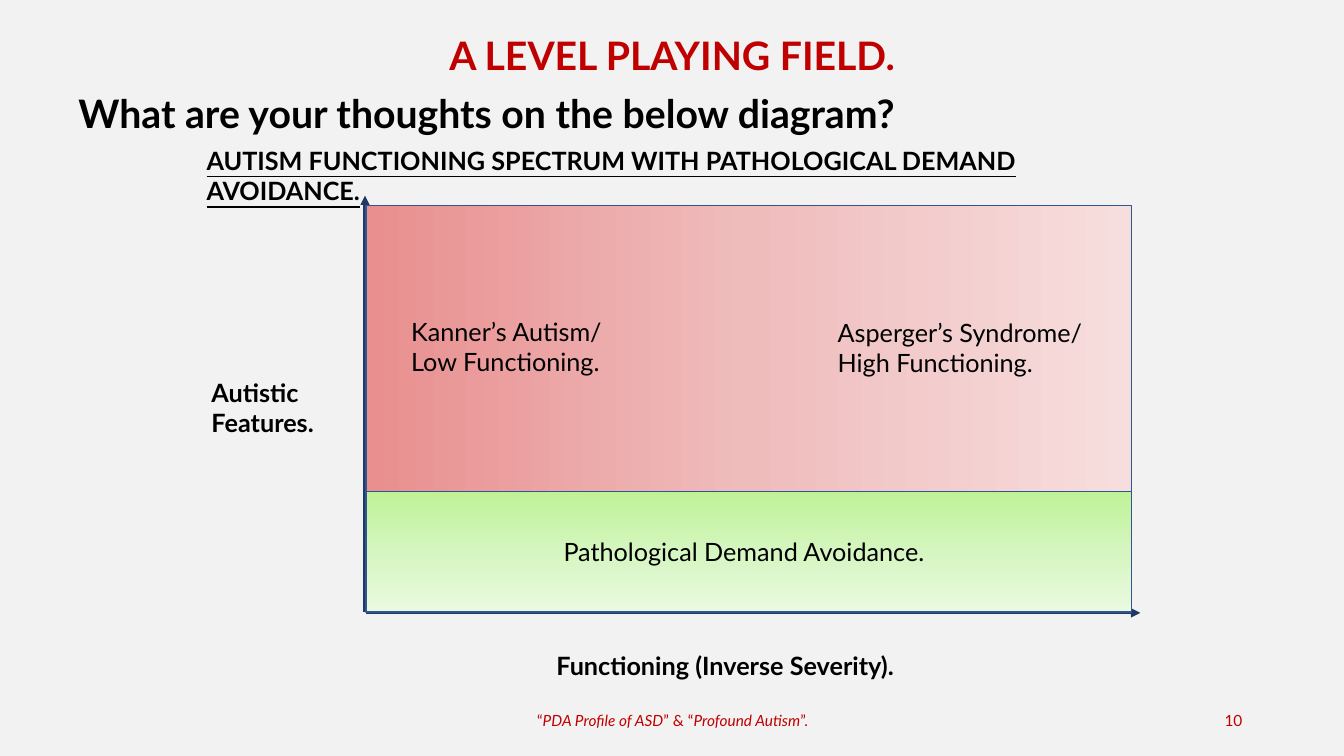
from copy import deepcopy

from pptx import Presentation
from pptx.dml.color import RGBColor
from pptx.enum.shapes import MSO_CONNECTOR, MSO_SHAPE
from pptx.enum.text import MSO_ANCHOR, PP_ALIGN
from pptx.oxml.ns import qn
from pptx.util import Inches, Pt

LINE, RECT = MSO_CONNECTOR.STRAIGHT, MSO_SHAPE.RECTANGLE
TOP, MIDDLE = MSO_ANCHOR.TOP, MSO_ANCHOR.MIDDLE
LEFT, CENTER, RIGHT = PP_ALIGN.LEFT, PP_ALIGN.CENTER, PP_ALIGN.RIGHT

WIDE, HIGH = Inches(13.33), Inches(7.5)
FONT = "Lato"
COLORS = {
    "paper": "F2F2F2", "red": "C00000", "ink": "000000",
    "axis": "203864", "edge": "325491",
}
PINKS = ("E98F8F", "EFBCBC", "F7DEDE")
GREENS = ("BEF297", "D5F6C0", "EAFAE0")

FIELD_X, FIELD_W = 27.23, 56.94
FIELD_TOP, SPLIT, BASE = 27.2, 65, 80.93


def rgb(name):
    return RGBColor.from_string(COLORS[name])


def across(share):
    return round(WIDE * share / 100)


def down(share):
    return round(HIGH * share / 100)


def area(x, y, w, h):
    return across(x), down(y), across(w), down(h)


def add_text(slide, box, text, size=18, color="ink", bold=False,
             align=LEFT, anchor=TOP):
    frame = slide.shapes.add_textbox(*area(*box)).text_frame
    frame.word_wrap = True
    frame.vertical_anchor = anchor
    frame.text = text
    for para in frame.paragraphs:
        para.alignment = align
        for run in para.runs:
            style(run, size, color, bold)
    return frame


def style(run, size, color, bold=False):
    font = run.font
    font.name, font.size, font.bold = FONT, Pt(size), bold
    font.color.rgb = rgb(color)


def add_band(slide, box, shades, angle):
    band = slide.shapes.add_shape(RECT, *area(*box))
    band.shadow.inherit = False
    band.line.color.rgb = rgb("edge")
    band.line.width = Pt(1)
    fill = band.fill
    fill.gradient()
    fill.gradient_angle = angle
    stops = next(band._element.spPr.iter(qn("a:gsLst")))
    stops.append(deepcopy(stops[-1]))
    for i, (stop, shade) in enumerate(zip(fill.gradient_stops, shades)):
        stop.position = i / (len(shades) - 1)
        stop.color.rgb = RGBColor.from_string(shade)


def add_axis(slide, x1, y1, x2, y2):
    axis = slide.shapes.add_connector(
        LINE, across(x1), down(y1), across(x2), down(y2))
    axis.line.color.rgb = rgb("axis")
    axis.line.width = Pt(2.25)
    props = axis._element.spPr
    tip = props.find(qn("a:ln")).makeelement(
        qn("a:tailEnd"), {"type": "triangle"})
    props.find(qn("a:ln")).append(tip)
    props.append(props.makeelement(qn("a:effectLst"), {}))


def add_footer(slide):
    frame = add_text(slide, (33.16, 92.67, 33.76, 5.33), "“", 11, "red",
                     align=CENTER, anchor=MIDDLE)
    parts = (("PDA Profile of ASD", True), ("” & “", False),
             ("Profound Autism", True), ("”.", False))
    for text, slant in parts:
        run = frame.paragraphs[0].add_run()
        run.text = text
        style(run, 11, "red")
        run.font.italic = slant
    add_text(slide, (70.67, 92.67, 22.51, 5.33), "10", 11, "red",
             align=RIGHT, anchor=MIDDLE)


def add_field(slide):
    add_axis(slide, 27.16, BASE, 27.16, 25.87)
    add_axis(slide, FIELD_X, 81.07, 84.85, 81.07)
    add_band(slide, (FIELD_X, FIELD_TOP, FIELD_W, SPLIT - FIELD_TOP),
             PINKS, 0)
    add_band(slide, (FIELD_X, SPLIT, FIELD_W, BASE - SPLIT), GREENS, 270)


def add_labels(slide):
    add_text(slide, (41.19, 70.27, 30.08, 5.6),
             "Pathological Demand Avoidance.")
    add_text(slide, (29.86, 41.2, 16.95, 9.73),
             "Kanner’s Autism/\nLow Functioning.")
    add_text(slide, (61.59, 41.33, 20.78, 9.73),
             "Asperger’s Syndrome/\nHigh Functioning.")
    add_text(slide, (40.66, 85.33, 30.16, 5.6),
             "Functioning (Inverse Severity).", bold=True)
    add_text(slide, (15, 49.2, 10.65, 9.73), "Autistic Features.", bold=True)
    head = add_text(
        slide, (14.63, 18.53, 70.97, 5.6),
        "AUTISM FUNCTIONING SPECTRUM WITH PATHOLOGICAL DEMAND AVOIDANCE.",
        bold=True)
    head.paragraphs[0].runs[0].font.underline = True


def main():
    deck = Presentation()
    deck.slide_width, deck.slide_height = WIDE, HIGH
    slide = deck.slides.add_slide(deck.slide_layouts[6])
    slide.background.fill.solid()
    slide.background.fill.fore_color.rgb = rgb("paper")
    add_footer(slide)
    add_text(slide, (5.1, 3.47, 89.8, 7.6), "A LEVEL PLAYING FIELD.",
             28, "red", True, CENTER)
    add_field(slide)
    add_labels(slide)
    add_text(slide, (5.1, 11.2, 89.8, 7.6),
             "What are your thoughts on the below diagram?", 28, bold=True)
    deck.save("out.pptx")


if __name__ == "__main__":
    main()
